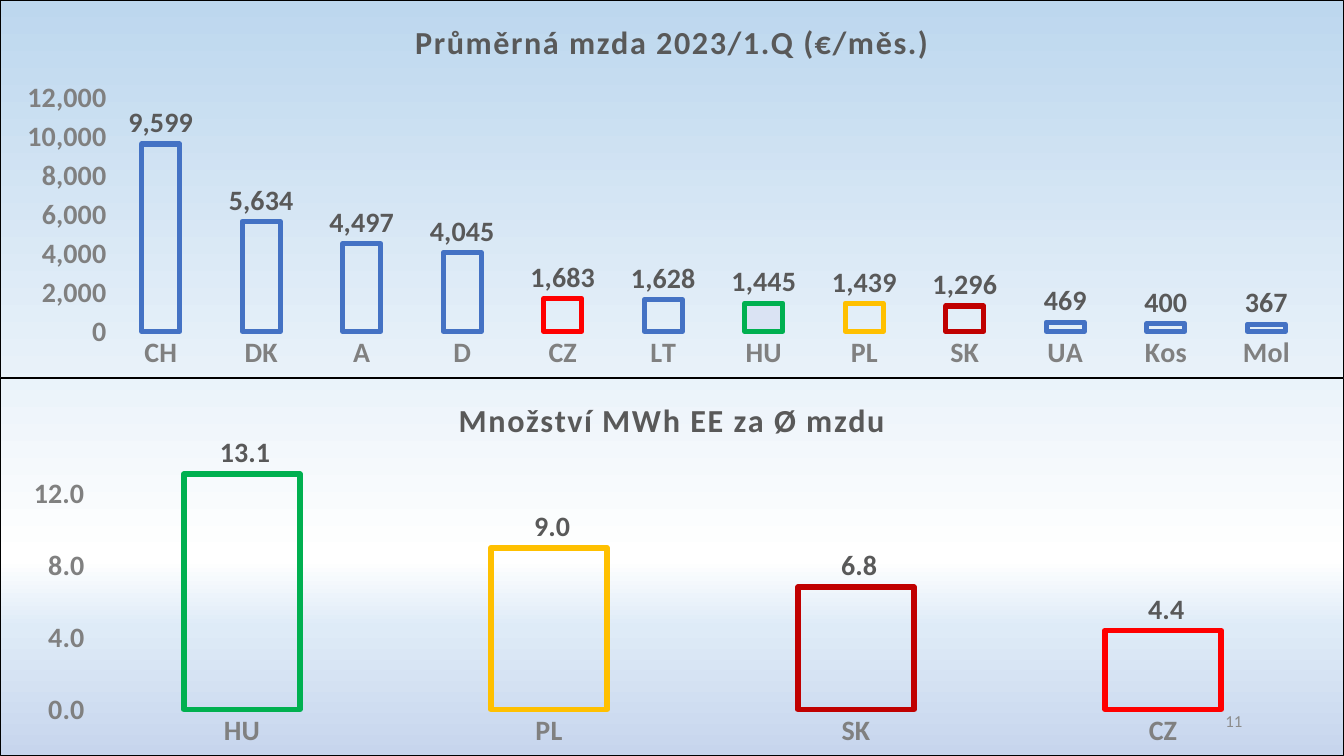
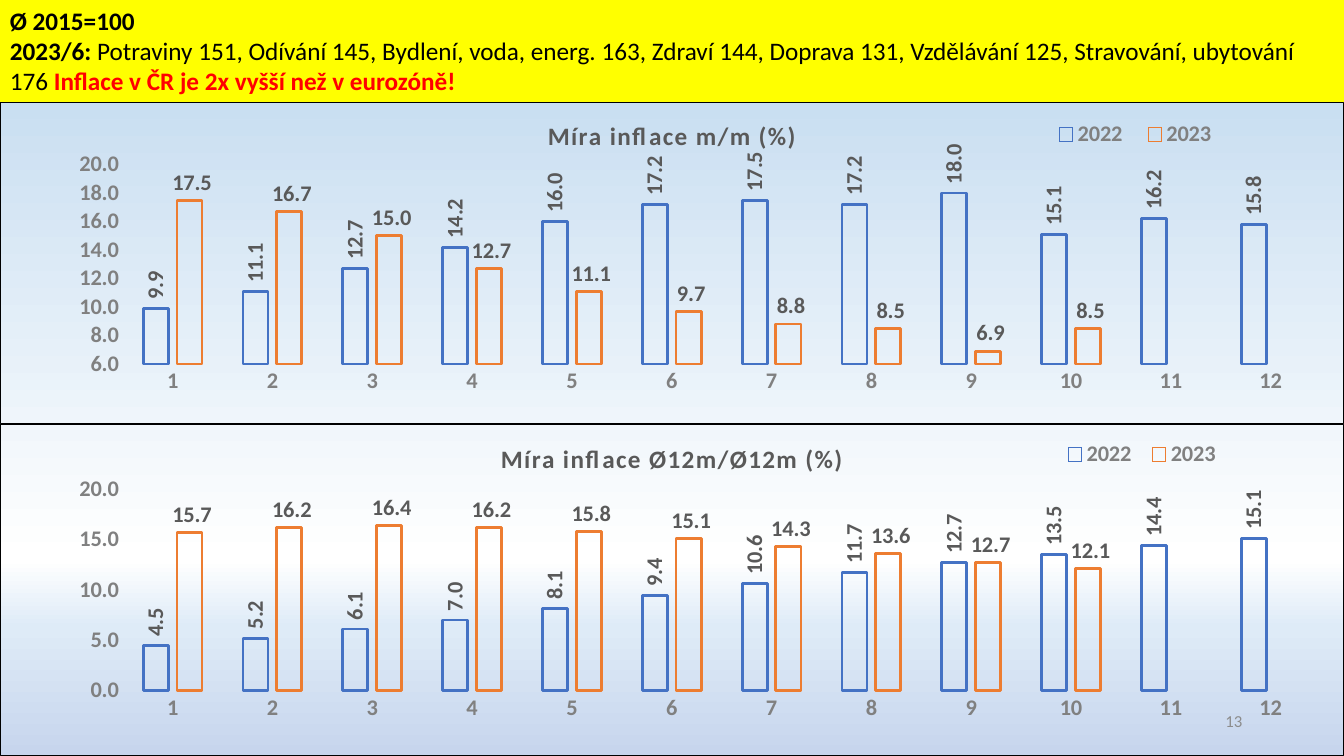
import pptx
import pptx.chart.data
import pptx.dml.color
import pptx.enum.chart
import pptx.enum.shapes
import pptx.enum.text
import pptx.oxml
import pptx.oxml.ns
import pptx.util

Inches, Pt = pptx.util.Inches, pptx.util.Pt

FONT = "Calibri"
COLORS = {
    "text": "000000", "label": "595959", "axis": "808080", "number": "8C8C8C",
    "band": "FFFF00", "alert": "FF0000", "blue": "4472C4", "orange": "ED7D31",
    "red": "FF0000", "green": "00B050", "yellow": "FFC000", "darkred": "C00000",
    "pale": "DAE3F3",
}
BACKGROUND_STOPS = [(0, "BDD7EE"), (74, "FFFFFF"), (83, "DEEBF7"), (100, "C7D5ED")]
COUNTRY_COLORS = {"CZ": "red", "HU": "green", "PL": "yellow", "SK": "darkred"}
SLIDE_WIDTH, SLIDE_HEIGHT = 13.33, 7.5
DECIMAL, THOUSANDS = "#\\ ##0.0", "#,##0"
MONTHS = [str(month) for month in range(1, 13)]

# Each run: text, bold, colour
BAND_HEIGHT = 1.01
BAND_PARAGRAPHS = [
    [("Ø 2015=100", True, "text")],
    [("2023/6:", True, "text"),
     (" Potraviny 151, Odívání 145, Bydlení, voda, energ. 163, Zdraví 144, Doprava 131, "
      "Vzdělávání 125, Stravování, ubytování 176 ", False, "text"),
     ("Inflace v ČR je 2x vyšší než v eurozóně!", True, "alert")],
]

# Axis: minimum, maximum, step. Boxes are fractions of the chart: x, y, width, height.
WAGE_CHARTS = [
    {"title": "Průměrná mzda 2023/1.Q (€/měs.)", "top": 0, "height": 3.75,
     "format": THOUSANDS, "axis": (0, 12000, 2000), "line": 3.75, "filled": {"HU": "pale"},
     "categories": ["CH", "DK", "A", "D", "CZ", "LT", "HU", "PL", "SK", "UA", "Kos", "Mol"],
     "series": [("Series 1", "blue", [9599, 5634, 4497, 4045, 1683, 1628, 1445, 1439,
                                      1296, 469, 400, 367])]},
    {"title": "Množství MWh EE za Ø mzdu", "top": 3.75, "height": 3.75,
     "format": DECIMAL, "axis": (0, 14, 4), "line": 4, "filled": {},
     "categories": ["HU", "PL", "SK", "CZ"],
     "series": [("Series 1", "blue", [13.1, 9.0, 6.8, 4.4])]},
]
INFLATION_CHARTS = [
    {"title": "Míra inflace m/m (%)", "top": BAND_HEIGHT, "height": 3.2,
     "format": DECIMAL, "axis": (6, 20, 2), "line": 2, "filled": {},
     "plot": (0.091, 0.194, 0.892, 0.62), "legend": (0.775, 0.05, 0.14, 0.1),
     "categories": MONTHS,
     "series": [
         ("2022", "blue", [9.9, 11.1, 12.7, 14.2, 16.0, 17.2, 17.5, 17.2, 18.0, 15.1, 16.2, 15.8]),
         ("2023", "orange", [17.5, 16.7, 15.0, 12.7, 11.1, 9.7, 8.8, 8.5, 6.9, 8.5, None, None])]},
    {"title": "Míra inflace Ø12m/Ø12m (%)", "top": 4.21, "height": 3.29,
     "format": DECIMAL, "axis": (0, 20, 5), "line": 2, "filled": {},
     "plot": (0.091, 0.194, 0.892, 0.61), "legend": (0.785, 0.04, 0.13, 0.1),
     "categories": MONTHS,
     "series": [
         ("2022", "blue", [4.5, 5.2, 6.1, 7.0, 8.1, 9.4, 10.6, 11.7, 12.7, 13.5, 14.4, 15.1]),
         ("2023", "orange", [15.7, 16.2, 16.4, 16.2, 15.8, 15.1, 14.3, 13.6, 12.7, 12.1,
                             None, None])]},
]


def rgb(name):
    return pptx.dml.color.RGBColor.from_string(COLORS[name])


def style_font(font, size, color, bold=True):
    font.name, font.size, font.bold = FONT, Pt(size), bold
    font.color.rgb = rgb(color)


def outline(chart_format, color, width, fill=None):
    """Outlined bar, hollow unless a fill is named."""
    if fill:
        chart_format.fill.solid()
        chart_format.fill.fore_color.rgb = rgb(fill)
    else:
        chart_format.fill.background()
    chart_format.line.color.rgb = rgb(color)
    chart_format.line.width = Pt(width)


def set_master_background(master):
    fill = master.background.fill
    fill.gradient()
    fill.gradient_angle = 270
    stops = master.element.xpath(".//p:bg//a:gsLst")[0]
    for stop in list(stops):
        stops.remove(stop)
    for percent, color in BACKGROUND_STOPS:
        stops.append(pptx.oxml.parse_xml(
            f'<a:gs {pptx.oxml.ns.nsdecls("a")} pos="{percent * 1000}">'
            f'<a:srgbClr val="{color}"/></a:gs>'))


def set_layout(parent, index, box, inner=False):
    """Fix a chart part at a box given in fractions of the chart."""
    for old in parent.xpath("./c:layout"):
        parent.remove(old)
    target = '<c:layoutTarget val="inner"/>' if inner else ""
    values = "".join(f'<c:{tag} val="{value}"/>' for tag, value in zip("xywh", box))
    parent.insert(index, pptx.oxml.parse_xml(
        f'<c:layout {pptx.oxml.ns.nsdecls("c")}><c:manualLayout>{target}'
        f'<c:xMode val="edge"/><c:yMode val="edge"/>{values}</c:manualLayout></c:layout>'))


def frame_chart(chart):
    """Transparent chart area with a thin border."""
    chart.element.xpath("./c:chart")[0].addnext(pptx.oxml.parse_xml(
        f'<c:spPr {pptx.oxml.ns.nsdecls("c", "a")}><a:noFill/><a:ln w="9525"><a:solidFill>'
        f'<a:srgbClr val="{COLORS["text"]}"/></a:solidFill></a:ln></c:spPr>'))


def style_axes(chart, content, size):
    for axis in (chart.category_axis, chart.value_axis):
        axis.has_major_gridlines = False
        axis.major_tick_mark = axis.minor_tick_mark = pptx.enum.chart.XL_TICK_MARK.NONE
        axis.format.line.fill.background()
        style_font(axis.tick_labels.font, size, "axis")
    values = chart.value_axis
    values.minimum_scale, values.maximum_scale, values.major_unit = content["axis"]
    values.tick_labels.number_format = content["format"]
    values.tick_labels.number_format_is_linked = False


def style_series(series, content, color, size):
    series.invert_if_negative = False
    outline(series.format, color, content["line"])
    for index, category in enumerate(content["categories"]):
        if category in COUNTRY_COLORS:
            outline(series.points[index].format, COUNTRY_COLORS[category],
                    content["line"], content["filled"].get(category))
    labels = series.data_labels
    labels.show_value = True
    labels.position = pptx.enum.chart.XL_LABEL_POSITION.OUTSIDE_END
    labels.number_format = content["format"]
    labels.number_format_is_linked = False
    style_font(labels.font, size, "label")


def add_column_chart(slide, content, size, title_size):
    data = pptx.chart.data.CategoryChartData(number_format=content["format"])
    data.categories = content["categories"]
    for name, _, values in content["series"]:
        data.add_series(name, values)
    chart = slide.shapes.add_chart(
        pptx.enum.chart.XL_CHART_TYPE.COLUMN_CLUSTERED, Inches(0), Inches(content["top"]),
        Inches(SLIDE_WIDTH), Inches(content["height"]), data).chart
    style_font(chart.font, size, "text")
    frame_chart(chart)

    chart.has_title = True
    title = chart.chart_title.text_frame
    title.text = content["title"]
    style_font(title.paragraphs[0].runs[0].font, title_size, "label")
    chart.element.xpath(".//c:title//a:r/a:rPr")[0].set("spc", "100")

    style_axes(chart, content, size)
    plot = chart.plots[0]
    plot.gap_width, plot.overlap, plot.vary_by_categories = 164, -35, False
    for series, (_, color, _) in zip(plot.series, content["series"]):
        style_series(series, content, color, size)

    chart.has_legend = "legend" in content
    if chart.has_legend:
        chart.legend.position = pptx.enum.chart.XL_LEGEND_POSITION.RIGHT
        chart.legend.include_in_layout = False
        style_font(chart.legend.font, size, "axis")
        set_layout(chart.element.xpath(".//c:legend")[0], 1, content["legend"])
        set_layout(chart.element.xpath(".//c:plotArea")[0], 0, content["plot"], inner=True)
        upright = chart.element.xpath(".//c:ser[1]/c:dLbls/c:txPr/a:bodyPr")[0]
        upright.set("rot", "-5400000")
        upright.set("vert", "horz")


def add_numbered_slide(prs, number):
    slide = prs.slides.add_slide(prs.slide_layouts[6])
    frame = slide.shapes.add_textbox(Inches(9.42), Inches(6.95), Inches(3), Inches(0.4)).text_frame
    frame.word_wrap = True
    frame.vertical_anchor = pptx.enum.text.MSO_ANCHOR.MIDDLE
    frame.text = number
    frame.paragraphs[0].alignment = pptx.enum.text.PP_ALIGN.RIGHT
    style_font(frame.paragraphs[0].runs[0].font, 12, "number", False)
    return slide


def add_band(slide):
    band = slide.shapes.add_shape(pptx.enum.shapes.MSO_SHAPE.RECTANGLE, Inches(0), Inches(0),
                                  Inches(SLIDE_WIDTH), Inches(BAND_HEIGHT))
    band.shadow.inherit = False
    band.fill.solid()
    band.fill.fore_color.rgb = rgb("band")
    band.line.fill.background()
    frame = band.text_frame
    frame.word_wrap = True
    frame.vertical_anchor = pptx.enum.text.MSO_ANCHOR.TOP
    for index, runs in enumerate(BAND_PARAGRAPHS):
        paragraph = frame.add_paragraph() if index else frame.paragraphs[0]
        paragraph.alignment = pptx.enum.text.PP_ALIGN.LEFT
        for text, bold, color in runs:
            run = paragraph.add_run()
            run.text = text
            style_font(run.font, 18, color, bold)


def main():
    prs = pptx.Presentation()
    prs.slide_width, prs.slide_height = Inches(SLIDE_WIDTH), Inches(SLIDE_HEIGHT)
    set_master_background(prs.slide_master)

    wages = add_numbered_slide(prs, "11")
    for content in WAGE_CHARTS:
        add_column_chart(wages, content, 20, 23)

    inflation = add_numbered_slide(prs, "13")
    add_band(inflation)
    for content in INFLATION_CHARTS:
        add_column_chart(inflation, content, 16, 18)

    prs.save("out.pptx")


if __name__ == "__main__":
    main()
